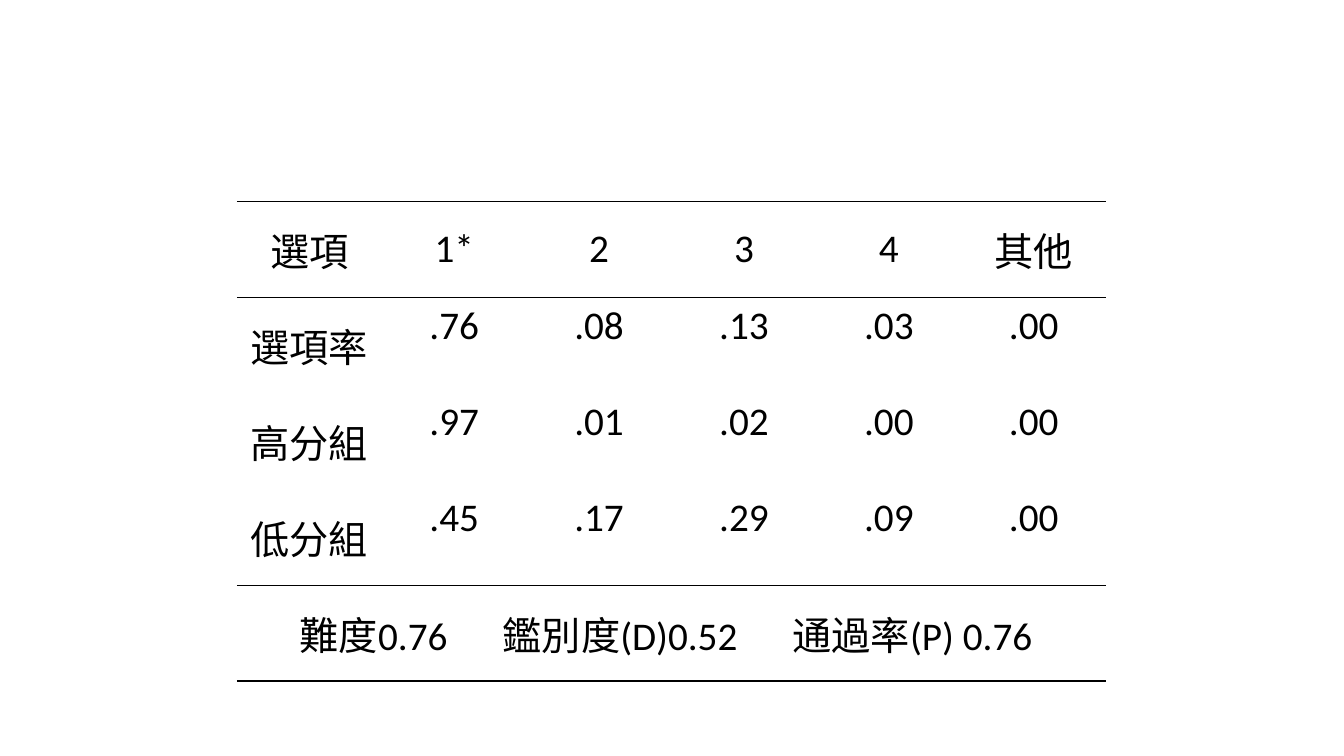
from lxml import etree
from pptx import Presentation
from pptx.dml.color import RGBColor
from pptx.enum.text import MSO_ANCHOR, PP_ALIGN
from pptx.oxml.ns import qn
from pptx.util import Pt

TOP, MIDDLE = MSO_ANCHOR.TOP, MSO_ANCHOR.MIDDLE
CENTER, LEFT = PP_ALIGN.CENTER, PP_ALIGN.LEFT
BLACK = RGBColor(0, 0, 0)
LABEL_FONT, VALUE_FONT = "Lato", "Calibri"
ROWS = [
    ["選項", "1*", "2", "3", "4", "其他"],
    ["選項率", ".76", ".08", ".13", ".03", ".00"],
    ["高分組", ".97", ".01", ".02", ".00", ".00"],
    ["低分組", ".45", ".17", ".29", ".09", ".00"],
]
SUMMARY = [("難度", "0.76"), ("鑑別度", "(D)0.52"), ("通過率", "(P) 0.76")]
SUMMARY_TABS = [145, 352]
RULED_EDGES = {0, 1, 4, 5}


def add_text(p, text, font=VALUE_FONT, size=28, color=BLACK, align=CENTER):
    """Append a formatted run to a paragraph."""
    p.alignment = align
    r = p.add_run()
    r.text = text
    r.font.name = font
    r.font.size = Pt(size)
    r.font.color.rgb = color


def set_tabs(p, stops):
    """Give a paragraph left tab stops, in points."""
    tabs = etree.SubElement(p._p.get_or_add_pPr(), qn("a:tabLst"))
    for stop in stops:
        etree.SubElement(tabs, qn("a:tab"), pos=str(Pt(stop)), algn="l")


def style_cell(cell, ruled_sides):
    """Clear the fill and draw black rules on the named sides only."""
    tcPr = cell._tc.get_or_add_tcPr()
    for side in ("lnL", "lnR", "lnT", "lnB"):
        ln = etree.SubElement(tcPr, qn("a:" + side), w=str(Pt(1)))
        if side in ruled_sides:
            fill = etree.SubElement(ln, qn("a:solidFill"))
            etree.SubElement(fill, qn("a:srgbClr"), val=str(BLACK))
        else:
            etree.SubElement(ln, qn("a:noFill"))
    cell.fill.background()


def fill_summary(cell):
    """Write the item statistics at tab stops in the merged bottom row."""
    cell.vertical_anchor = MIDDLE
    cell.margin_left = Pt(45)
    p = cell.text_frame.paragraphs[0]
    set_tabs(p, SUMMARY_TABS)
    for i, (label, value) in enumerate(SUMMARY):
        add_text(p, "\t" + label if i else label, font=LABEL_FONT, align=LEFT)
        add_text(p, value, align=LEFT)


def add_item_table(s, left, top, width, height):
    """Place the item analysis table in the given box."""
    n_rows, n_cols = len(ROWS) + 1, len(ROWS[0])
    table = s.shapes.add_table(n_rows, n_cols, Pt(left), Pt(top),
                               Pt(width), Pt(height)).table
    table.first_row = table.horz_banding = False
    for column in table.columns:
        column.width = Pt(width / n_cols)
    for i, row in enumerate(table.rows):
        row.height = Pt(height / n_rows)
        sides = {side for side, edge in (("lnT", i), ("lnB", i + 1))
                 if edge in RULED_EDGES}
        for cell in row.cells:
            style_cell(cell, sides)
    for i, texts in enumerate(ROWS):
        for j, text in enumerate(texts):
            cell = table.cell(i, j)
            cell.vertical_anchor = TOP if i and j else MIDDLE
            is_label = j == 0 or text == "其他"
            add_text(cell.text_frame.paragraphs[0], text,
                     font=LABEL_FONT if is_label else VALUE_FONT)
    summary = table.cell(n_rows - 1, 0)
    summary.merge(table.cell(n_rows - 1, n_cols - 1))
    fill_summary(summary)


def main():
    """Build the slide and save it."""
    prs = Presentation()
    prs.slide_width, prs.slide_height = Pt(960), Pt(540)
    s = prs.slides.add_slide(prs.slide_layouts[6])
    add_item_table(s, 169.2, 144, 621, 342.5)
    prs.save("out.pptx")


if __name__ == "__main__":
    main()
